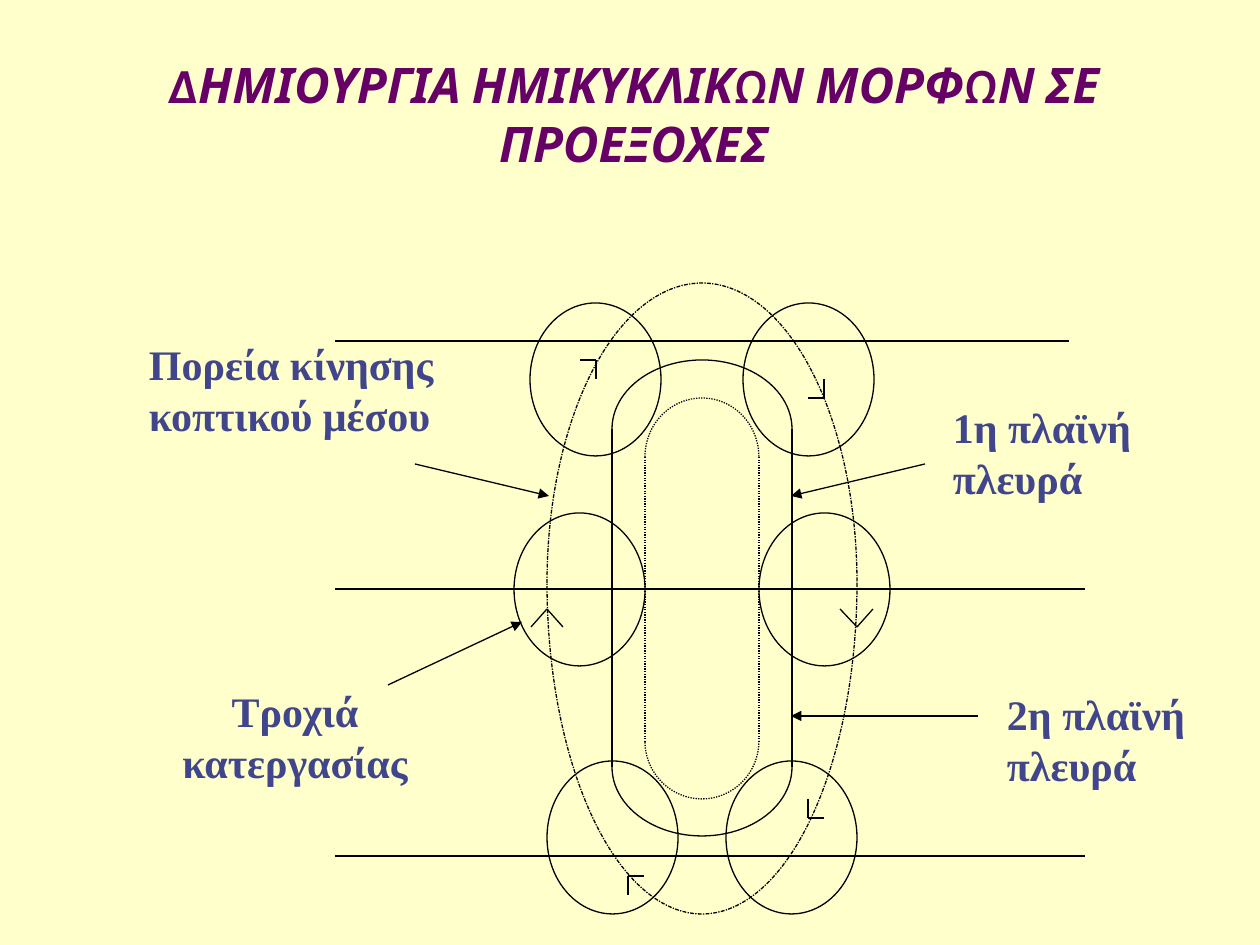
from itertools import pairwise

from lxml import etree
from pptx import Presentation
from pptx.dml.color import RGBColor
from pptx.enum.dml import MSO_LINE
from pptx.enum.shapes import MSO_CONNECTOR, MSO_SHAPE
from pptx.enum.text import MSO_ANCHOR, PP_ALIGN
from pptx.oxml.ns import qn
from pptx.util import Emu, Pt

SCALE = 914400 / 126
COLORS = {"paper": "FFFFCC", "title": "660066", "label": "40458C", "ink": "000000"}
LEFT, CENTER = PP_ALIGN.LEFT, PP_ALIGN.CENTER
TOP, BOTTOM = MSO_ANCHOR.TOP, MSO_ANCHOR.BOTTOM
ARC, OVAL = MSO_SHAPE.ARC, MSO_SHAPE.OVAL
STRAIGHT = MSO_CONNECTOR.STRAIGHT
DOT = MSO_LINE.ROUND_DOT
DOT_XML = {"dot": "sysDot", "dashdot": "sysDashDot"}
TITLE = {"name": "Karla", "size": Pt(28), "bold": True, "italic": True}
LABEL = {"name": "Times New Roman", "size": Pt(24), "bold": True}


def px(n):
    return Emu(round(n * SCALE))


def color(name):
    return RGBColor.from_string(COLORS[name])


class Sketch:
    def __init__(self, slide):
        self.slide = slide
        self.shapes = slide.shapes
        fill = slide.background.fill
        fill.solid()
        fill.fore_color.rgb = color("paper")

    def stroke(self, item, dash=None):
        item.line.color.rgb = color("ink")
        item.line.width = Pt(0.75)
        if dash:
            item.line.dash_style = DOT
            item.line._ln.find(qn("a:prstDash")).set("val", DOT_XML[dash])

    def line(self, start, end, dash=None, arrow=False):
        link = self.shapes.add_connector(STRAIGHT, *map(px, start + end))
        self.stroke(link, dash)
        if arrow:
            etree.SubElement(link.line._ln, qn("a:tailEnd"), type="triangle")
        etree.SubElement(link._element.spPr, qn("a:effectLst"))

    def chain(self, points):
        for start, end in pairwise(points):
            self.line(start, end)

    def shape(self, kind, box, dash=None):
        item = self.shapes.add_shape(kind, *map(px, box))
        item.shadow.inherit = False
        item.fill.background()
        self.stroke(item, dash)
        return item

    def arc(self, box, start, end, dash):
        """Draw part of an ellipse clockwise between two angles in degrees."""
        item = self.shape(ARC, box, dash)
        for i, angle in enumerate((start, end)):
            item.adjustments[i] = angle * 0.6

    def slot(self, left, width, top, upper, lower, bottom, dash=None):
        """Draw two half ellipses joined by straight sides."""
        self.arc((left, top, width, 2 * (upper - top)), 180, 0, dash)
        self.arc((left, 2 * lower - bottom, width, 2 * (bottom - lower)), 0, 180, dash)
        if upper < lower:
            for x in (left, left + width):
                self.line((x, upper), (x, lower), dash)

    def text(self, box, lines, style, ink, align=LEFT, anchor=TOP, inset=(1, 1), wrap=True):
        frame = self.shapes.add_textbox(*map(px, box)).text_frame
        side, edge = map(px, inset)
        form = {"word_wrap": wrap, "vertical_anchor": anchor, "margin_left": side,
                "margin_right": side, "margin_top": edge, "margin_bottom": edge}
        for key, value in form.items():
            setattr(frame, key, value)
        frame.text = "\n".join(lines)
        for para in frame.paragraphs:
            para.alignment = align
            for key, value in style.items():
                setattr(para.font, key, value)
            para.font.color.rgb = color(ink)


def main():
    deck = Presentation()
    deck.slide_width, deck.slide_height = px(1260), px(945)
    sketch = Sketch(deck.slides.add_slide(deck.slide_layouts[6]))

    sketch.text((98, 20, 1071, 158), ["ΔΗΜΙΟΥΡΓΙΑ ΗΜΙΚΥΚΛΙΚΩΝ ΜΟΡΦΩΝ ΣΕ ΠΡΟΕΞΟΧΕΣ"],
                TITLE, "title", CENTER, BOTTOM, (13, 6))

    for y, right in ((589, 1085), (341, 1069), (856, 1085)):
        sketch.line((335, y), (right, y))

    sketch.slot(645, 114, 398, 457, 741, 799, "dot")
    sketch.slot(612, 180, 360, 429, 767, 836)
    sketch.slot(547, 310, 283, 583, 583, 914, "dashdot")

    cutters = [
        ((726, 761), [(824, 818), (808, 818), (808, 799)]),
        ((547, 761), [(628, 895), (628, 876), (644, 876)]),
        ((514, 513), [(531, 627), (547, 609), (563, 627)]),
        ((759, 513), [(840, 609), (857, 627), (873, 609)]),
        ((530, 303), [(580, 360), (596, 360), (596, 379)]),
        ((743, 303), [(824, 379), (824, 398), (808, 398)]),
    ]
    for corner, mark in cutters:
        sketch.shape(OVAL, corner + (131, 153))
        sketch.chain(mark)

    arrows = [((978, 716), (791, 716)), ((925, 464), (791, 496)),
              ((415, 464), (549, 496)), ((388, 685), (522, 622))]
    for start, end in arrows:
        sketch.line(start, end, arrow=True)

    labels = [((148, 338, 295, 126), "Πορεία κίνησης κοπτικού μέσου", LEFT),
              ((952, 401, 188, 126), "1η πλαϊνή πλευρά", LEFT),
              ((174, 685, 242, 126), "Τροχιά κατεργασίας", CENTER)]
    for box, words, align in labels:
        sketch.text(box, [words], LABEL, "label", align)
    sketch.text((994, 683, 214, 113), ["2η πλαϊνή", "πλευρά"], LABEL, "label",
                inset=(13, 6), wrap=False)

    deck.save("out.pptx")


if __name__ == "__main__":
    main()
